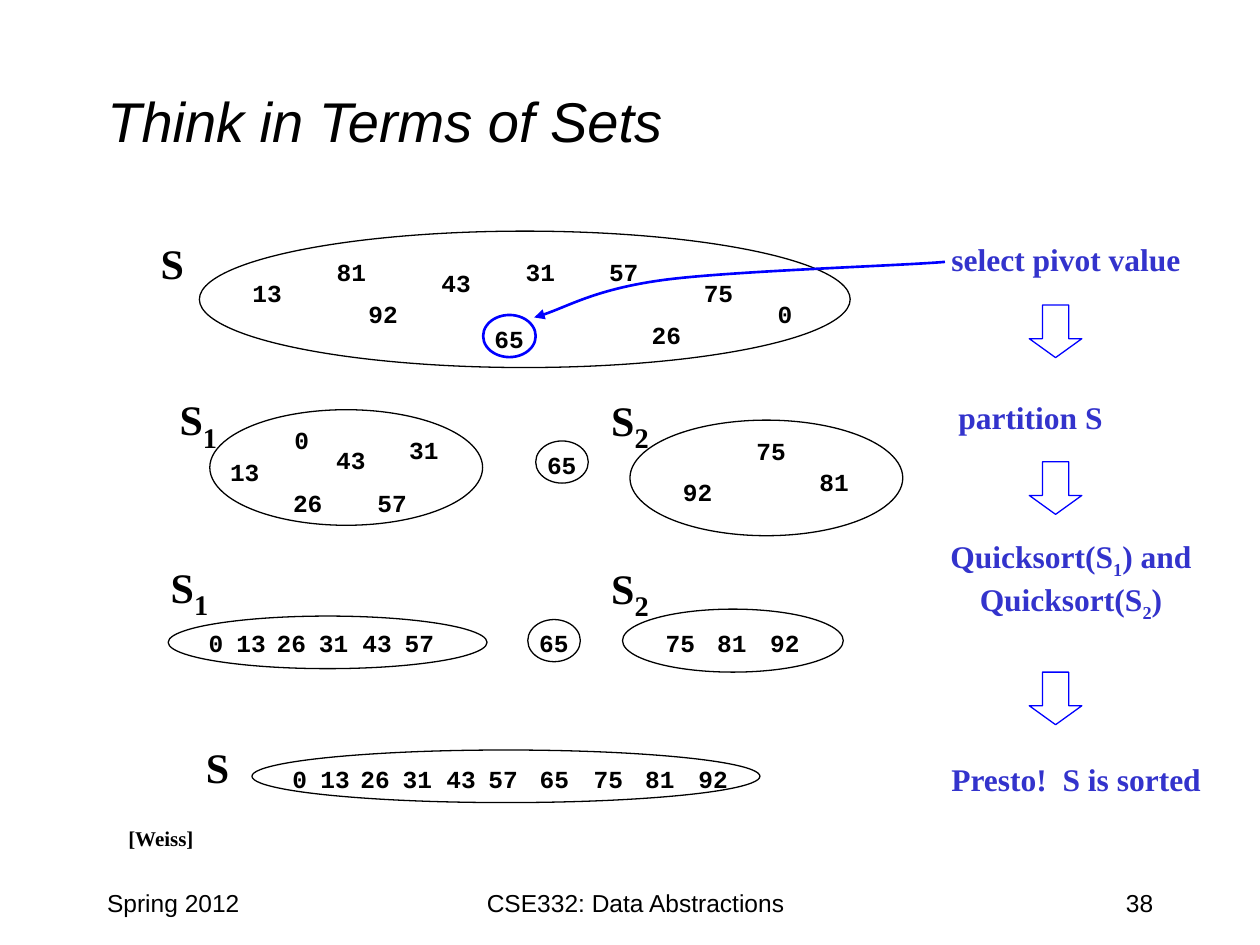
from lxml import etree
from pptx import Presentation
from pptx.dml.color import RGBColor
from pptx.enum.shapes import MSO_SHAPE
from pptx.enum.text import MSO_ANCHOR, MSO_AUTO_SIZE, PP_ALIGN
from pptx.oxml.ns import qn
from pptx.util import Cm, Pt

BLACK = RGBColor(0x00, 0x00, 0x00)
WHITE = RGBColor(0xFF, 0xFF, 0xFF)
BLUE = RGBColor(0x00, 0x00, 0xFF)
INDIGO = RGBColor(0x33, 0x33, 0xCC)
OVAL, DOWN_ARROW = MSO_SHAPE.OVAL, MSO_SHAPE.DOWN_ARROW
LEFT, CENTER, RIGHT = PP_ALIGN.LEFT, PP_ALIGN.CENTER, PP_ALIGN.RIGHT
TOP, MIDDLE = MSO_ANCHOR.TOP, MSO_ANCHOR.MIDDLE
FIT_SHAPE, NO_FIT = MSO_AUTO_SIZE.SHAPE_TO_FIT_TEXT, MSO_AUTO_SIZE.NONE

NUMBER = {"name": "Courier New", "size": Pt(14), "bold": True}
LABEL = {"name": "Times New Roman", "size": Pt(24), "bold": True}
STEP = {"name": "Times New Roman", "size": Pt(18), "bold": True}
CREDIT = {"name": "Times New Roman", "size": Pt(12), "bold": True}
FOOTER = {"name": "Arial", "size": Pt(14)}
TITLE = {"name": "Arial", "size": Pt(32), "italic": True}

PIVOT_SIZE = (1.06, 0.85)
PIVOT_NUMBER = [("65", -0.03, 0.04)]
SORTED_X = {"0": 0.56, "13": 1.12, "26": 1.93, "31": 2.78, "43": 3.66, "57": 4.51}
SORTED_ALL_X = {**SORTED_X, "65": 5.54, "75": 6.63, "81": 7.67, "92": 8.74}
SORTED_LARGE_X = {"75": 0.61, "81": 1.65, "92": 2.72}


def format_run(r, style, color):
    """Apply a dict of font values and a colour to a run."""
    for name, value in style.items():
        setattr(r.font, name, value)
    r.font.color.rgb = color


def add_text(s, box, lines, style, color=BLACK, sub_size=None, align=CENTER, fit=True):
    """Add text whose lines alternate normal and subscript pieces."""
    tf = s.shapes.add_textbox(*map(Cm, box)).text_frame
    tf.word_wrap = not fit
    tf.auto_size = FIT_SHAPE if fit else NO_FIT
    tf.vertical_anchor = MIDDLE if fit else TOP
    for i, pieces in enumerate(lines):
        p = tf.paragraphs[0] if i == 0 else tf.add_paragraph()
        p.alignment = align
        for j, piece in enumerate(pieces):
            r = p.add_run()
            r.text = piece
            format_run(r, style, color)
            if j % 2:
                r.font.size = sub_size or style["size"]
                r.font._element.set("baseline", "-25000")


def style_outline(sp, line, width=0.75, fill=None):
    """Set the line and fill of a shape and drop its shadow."""
    sp.shadow.inherit = False
    sp.line.color.rgb = line
    sp.line.width = Pt(width)
    if fill is None:
        sp.fill.background()
    else:
        sp.fill.solid()
        sp.fill.fore_color.rgb = fill


def add_set(s, box, numbers, label=None, label_at=None, fill=None, line=BLACK, width=0.75):
    """Draw one set: an ellipse, its numbers and its label."""
    left, top = box[:2]
    style_outline(s.shapes.add_shape(OVAL, *map(Cm, box)), line, width, fill)
    for text, dx, dy in numbers:
        size = (0.51 + 0.3 * len(text), 0.86)
        add_text(s, (left + dx, top + dy, *size), [(text,)], NUMBER)
    if label:
        size = (1.32, 1.45) if len(label) > 1 else (0.99, 1.27)
        place = (left + label_at[0], top + label_at[1], *size)
        add_text(s, place, [label], LABEL, sub_size=Pt(28))


def in_row(positions, dy):
    """Place numbers at one height."""
    return [(text, dx, dy) for text, dx in positions.items()]


def add_steps(s, left, top):
    """Write the steps of the algorithm with arrows between them."""
    steps = [
        (0.03, 0, 5.18, 1.02, [("select pivot value",)]),
        (0.18, 3.18, 3.45, 1.02, [("partition S",)]),
        (0, 6.08, 5.44, 1.8, [("Quicksort(S", "1", ") and"), ("Quicksort(S", "2", ")")]),
        (0.03, 10.47, 5.59, 1.02, [("Presto!  S is sorted",)]),
    ]
    for dx, dy, width, height, lines in steps:
        add_text(s, (left + dx, top + dy, width, height), lines, STEP, INDIGO)
    for dy in (1.43, 4.59, 8.83):
        box = (left + 1.88, top + dy, 1.06, 1.06)
        arrow = s.shapes.add_shape(DOWN_ARROW, *map(Cm, box))
        arrow.adjustments[1] = 0.36
        style_outline(arrow, BLUE)


def add_pivot_arrow(s, left, top):
    """Draw the curved arrow from the first step to the pivot."""
    knots = [(8.28, 0), (7.34, 0.08), (4.04, 0.18), (2.64, 0.36),
             (1.27, 0.54), (0.56, 0.97), (0, 1.12)]
    points = [(Cm(left + x), Cm(top + y)) for x, y in knots]
    builder = s.shapes.build_freeform(*points[0])
    builder.add_line_segments(points[1:], close=False)
    sp = builder.convert_to_shape()
    style_outline(sp, BLUE, 1.5)
    segments = list(sp._element.iter(qn("a:lnTo")))
    outline = segments[0].getparent()
    for start in range(0, len(segments), 3):
        curve = etree.SubElement(outline, qn("a:cubicBezTo"))
        for segment in segments[start:start + 3]:
            curve.append(segment[0])
            outline.remove(segment)
    etree.SubElement(sp.line._get_or_add_ln(), qn("a:tailEnd"), type="triangle")


def add_title(s, box, text):
    """Place and format the title placeholder."""
    title = s.shapes.title
    for name, value in zip(("left", "top", "width", "height"), box):
        setattr(title, name, Cm(value))
    tf = title.text_frame
    tf.vertical_anchor = MIDDLE
    p = tf.paragraphs[0]
    p.alignment = LEFT
    r = p.add_run()
    r.text = text
    format_run(r, TITLE, BLACK)


def add_footer(s, left, top):
    """Write the credit, date, course and page number."""
    add_text(s, (left + 0.42, top - 1.27, 1.83, 0.76), [("[Weiss]",)], CREDIT)
    for dx, width, text, align in ((0, 5.29, "Spring 2012", LEFT),
                                   (6.14, 9.53, "CSE332: Data Abstractions", CENTER),
                                   (16.3, 5.29, "38", RIGHT)):
        add_text(s, (left + dx, top, width, 1.27), [(text,)], FOOTER, align=align, fit=False)


def main():
    """Build the slide and save it."""
    prs = Presentation()
    prs.slide_width, prs.slide_height = Cm(25.4), Cm(19.05)
    s = prs.slides.add_slide(prs.slide_layouts[5])
    add_title(s, (1.91, 0.84, 21.59, 3.18), "Think in Terms of Sets")
    add_set(s, (4.02, 4.66, 13.12, 2.75),
            [("13", 0.81, 0.81), ("81", 2.51, 0.38), ("92", 3.15, 1.24),
             ("43", 4.62, 0.61), ("31", 6.32, 0.38), ("57", 8, 0.38),
             ("26", 8.86, 1.65), ("75", 9.91, 0.81), ("0", 11.4, 1.24)],
            ("S",), (-1.04, 0), WHITE)
    add_set(s, (9.74, 6.35, *PIVOT_SIZE), PIVOT_NUMBER, line=BLUE, width=1.5)
    add_set(s, (4.23, 8.26, 5.5, 2.33),
            [("13", 0.15, 0.81), ("43", 2.29, 0.58), ("31", 3.76, 0.38),
             ("57", 3.12, 1.45), ("26", 1.42, 1.45), ("0", 1.45, 0.18)],
            ("S", "1"), (-0.89, -0.51), WHITE)
    add_set(s, (10.8, 8.89, *PIVOT_SIZE), PIVOT_NUMBER)
    add_set(s, (12.7, 8.47, 5.5, 2.33),
            [("81", 3.56, 0.81), ("92", 0.81, 1.02), ("75", 2.29, 0.18)],
            ("S", "2"), (-0.66, -0.71))
    add_set(s, (3.39, 12.42, 6.43, 1.06), in_row(SORTED_X, 0.1),
            ("S", "1"), (-0.23, -1.3), WHITE)
    add_set(s, (10.64, 12.49, *PIVOT_SIZE), PIVOT_NUMBER)
    add_set(s, (12.55, 12.28, 4.45, 1.27), in_row(SORTED_LARGE_X, 0.25),
            ("S", "2"), (-0.51, -1.14))
    add_set(s, (5.08, 15.12, 10.24, 1.06), in_row(SORTED_ALL_X, 0.15),
            ("S",), (-1.19, -0.3), WHITE)
    add_steps(s, 18.87, 4.72)
    add_pivot_arrow(s, 10.77, 5.28)
    add_footer(s, 1.91, 17.78)
    prs.save("out.pptx")


if __name__ == "__main__":
    main()
